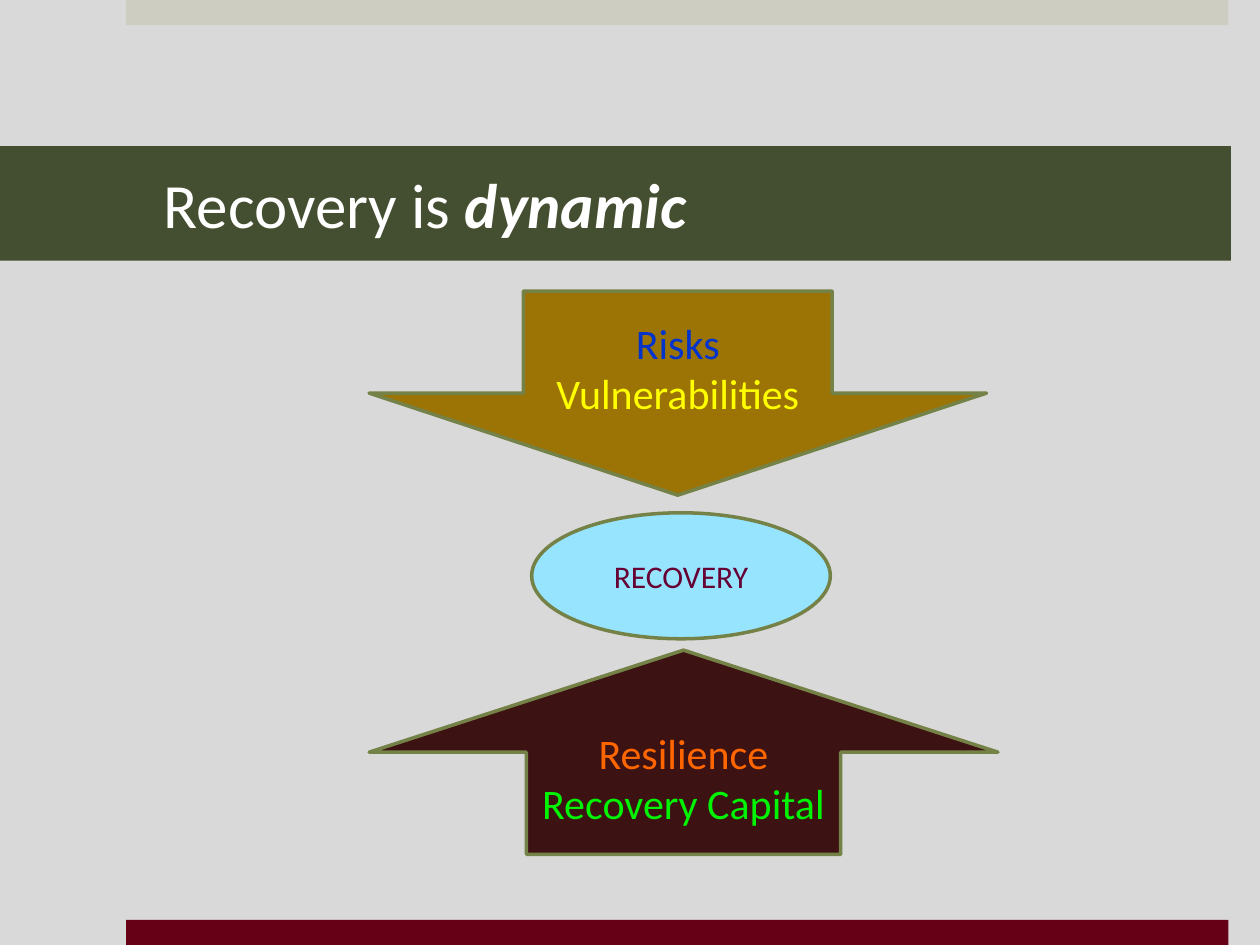
from pptx import Presentation
from pptx.dml.color import RGBColor
from pptx.enum.shapes import MSO_SHAPE
from pptx.enum.text import MSO_ANCHOR, PP_ALIGN
from pptx.util import Inches, Pt

RECT, OVAL = MSO_SHAPE.RECTANGLE, MSO_SHAPE.OVAL
DOWN, UP = MSO_SHAPE.DOWN_ARROW, MSO_SHAPE.UP_ARROW
MIDDLE, CENTER, LEFT = MSO_ANCHOR.MIDDLE, PP_ALIGN.CENTER, PP_ALIGN.LEFT
FONT = "Calibri"
COLORS = {
    "background": "D9D9D9", "top_bar": "CDCEC1", "bottom_bar": "660017",
    "title_band": "444E30", "white": "FFFFFF", "outline": "758247",
    "gold": "9C7406", "sky": "97E4FF", "maroon": "3D1212",
    "blue": "0033CC", "yellow": "FFFF00", "plum": "660033",
    "orange": "FF6600", "green": "00F403",
}


def add_filled(kind, box, fill, outline=None):
    sp = s.shapes.add_shape(kind, *[Inches(v) for v in box])
    sp.shadow.inherit = False
    sp.fill.solid()
    sp.fill.fore_color.rgb = RGBColor.from_string(COLORS[fill])
    if outline:
        sp.line.color.rgb = RGBColor.from_string(COLORS[outline])
        sp.line.width = Pt(2)
    else:
        sp.line.fill.background()
    sp.text_frame.word_wrap = True
    sp.text_frame.vertical_anchor = MIDDLE
    return sp


def format_run(r, size, color):
    r.font.name = FONT
    r.font.size = Pt(size)
    r.font.color.rgb = RGBColor.from_string(COLORS[color])


prs = Presentation()
prs.slide_width, prs.slide_height = Inches(10), Inches(7.5)
s = prs.slides.add_slide(prs.slide_layouts[6])
s.background.fill.solid()
s.background.fill.fore_color.rgb = RGBColor.from_string(COLORS["background"])

# Edge bars
for top, fill in [(0, "top_bar"), (7.3, "bottom_bar")]:
    add_filled(RECT, (1, top, 8.75, 0.2), fill)

# Title band
title = add_filled(RECT, (0, 1.16, 9.77, 0.91), "title_band")
tf = title.text_frame
tf.margin_left, tf.margin_right = Inches(1.3), Inches(0.3)
p = tf.paragraphs[0]
p.alignment = LEFT
for text, emphasis in [("Recovery is ", False), ("dynamic", True)]:
    r = p.add_run()
    r.text = text
    format_run(r, 36, "white")
    r.font.bold = r.font.italic = emphasis

# Opposing forces around recovery
diagram = [
    (DOWN, (2.93, 2.31, 4.9, 1.62), "gold", 24,
     [("Risks", "blue"), ("Vulnerabilities", "yellow")]),
    (OVAL, (4.22, 4.07, 2.37, 1), "sky", 18, [("RECOVERY", "plum")]),
    (UP, (2.93, 5.16, 4.99, 1.62), "maroon", 24,
     [("Resilience", "orange"), ("Recovery Capital", "green")]),
]
for kind, box, fill, size, lines in diagram:
    tf = add_filled(kind, box, fill, "outline").text_frame
    tf.text = "\n".join(text for text, _ in lines)
    for p, (_, color) in zip(tf.paragraphs, lines):
        p.alignment = CENTER
        format_run(p.runs[0], size, color)

prs.save("out.pptx")
